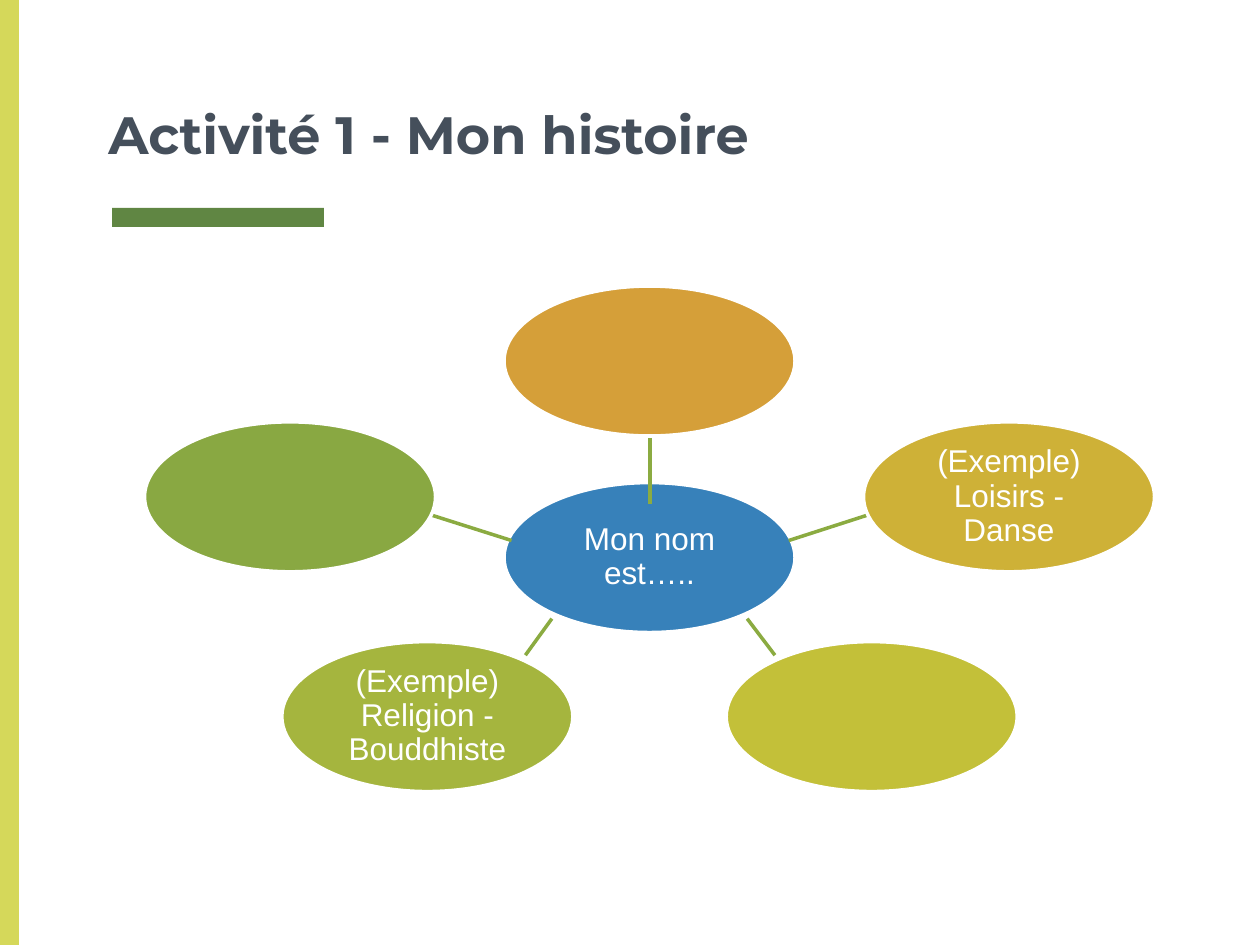
from dataclasses import dataclass
from math import cos, radians, sin

from lxml import etree
from pptx import Presentation
from pptx.dml.color import RGBColor
from pptx.enum.shapes import MSO_CONNECTOR, MSO_SHAPE
from pptx.enum.text import MSO_ANCHOR, MSO_AUTO_SIZE, PP_ALIGN
from pptx.oxml.ns import qn
from pptx.util import Inches, Pt

RECT, OVAL = MSO_SHAPE.RECTANGLE, MSO_SHAPE.OVAL
LINE = MSO_CONNECTOR.STRAIGHT
MIDDLE, BOTTOM = MSO_ANCHOR.MIDDLE, MSO_ANCHOR.BOTTOM
LEFT, CENTER = PP_ALIGN.LEFT, PP_ALIGN.CENTER
NO_FIT = MSO_AUTO_SIZE.NONE

COLORS = {
    "edge": "D5D85A", "rule": "608643", "title": "454F5B", "white": "FFFFFF",
    "spoke": "8BAB41", "hub": "3781BA", "orange": "D59F39", "gold": "CEB137",
    "lime": "C3C039", "olive": "A5B53E", "green": "89A842",
}

# Hub centre, oval size and the radii of the ring of petals
MID_X, MID_Y = 5.155, 4.425
OVAL_W, OVAL_H = 2.31, 1.19
RING_X, RING_Y = 3.0, 1.56


@dataclass
class Petal:
    color: str
    text: str
    spoke: tuple[float, float, float, float]  # from hub to petal


PETALS = [  # clockwise from the top
    Petal("orange", "", (5.16, 4, 5.16, 3.48)),
    Petal("gold", "(Exemple) Loisirs - Danse", (6.26, 4.29, 6.88, 4.09)),
    Petal("lime", "", (5.93, 4.91, 6.15, 5.2)),
    Petal("olive", "(Exemple) Religion - Bouddhiste", (4.38, 4.91, 4.17, 5.2)),
    Petal("green", "", (4.06, 4.29, 3.43, 4.09)),
]


def color(name: str) -> RGBColor:
    return RGBColor.from_string(COLORS[name])


def add_text(frame, text: str, font: str, size: int, ink: str, align,
             bold: bool = False) -> None:
    par = frame.paragraphs[0]
    par.alignment = align
    run = par.add_run()
    run.text = text
    run.font.name, run.font.size, run.font.bold = font, Pt(size), bold
    run.font.color.rgb = color(ink)


def set_frame(frame, inset: float, anchor) -> None:
    frame.word_wrap = True
    frame.auto_size = NO_FIT
    frame.vertical_anchor = anchor
    frame.margin_left = frame.margin_right = Inches(inset)
    frame.margin_top = frame.margin_bottom = Inches(inset)


def add_block(slide, kind, x: float, y: float, w: float, h: float, fill: str):
    shape = slide.shapes.add_shape(kind, Inches(x), Inches(y), Inches(w), Inches(h))
    shape.shadow.inherit = False
    shape.fill.solid()
    shape.fill.fore_color.rgb = color(fill)
    shape.line.fill.background()
    return shape


def add_oval(slide, x: float, y: float, fill: str, text: str) -> None:
    oval = add_block(slide, OVAL, x - OVAL_W / 2, y - OVAL_H / 2,
                     OVAL_W, OVAL_H, fill)
    oval.line.color.rgb = color("white")
    oval.line.width = Pt(2)
    if text:
        set_frame(oval.text_frame, 0.01, MIDDLE)
        add_text(oval.text_frame, text, "Arial", 18, "white", CENTER)
        oval.text_frame.paragraphs[0].line_spacing = 0.9


def add_spoke(slide, ends: tuple[float, float, float, float]) -> None:
    spoke = slide.shapes.add_connector(LINE, *(Inches(end) for end in ends))
    spoke.line.color.rgb = color("spoke")
    spoke.line.width = Pt(2)
    etree.SubElement(spoke._element.spPr, qn("a:effectLst"))


def main() -> None:
    deck = Presentation()
    deck.slide_width, deck.slide_height = Inches(10), Inches(7.5)
    slide = deck.slides.add_slide(deck.slide_layouts[5])

    # Side band and rule under the title
    add_block(slide, RECT, 0.89, 1.65, 1.68, 0.15, "rule")
    add_block(slide, RECT, 0, 0, 0.15, 7.5, "edge")

    # Title
    title = slide.shapes.title
    title.left, title.top = Inches(0.76), Inches(0)
    title.width, title.height = Inches(8.49), Inches(1.41)
    set_frame(title.text_frame, 0.1, BOTTOM)
    add_text(title.text_frame, "Activité 1 - Mon histoire", "Montserrat", 30,
             "title", LEFT, bold=True)

    # Hub, then each spoke with its petal
    add_oval(slide, MID_X, MID_Y, "hub", "Mon nom est…..")
    for i, petal in enumerate(PETALS):
        angle = radians(360 / len(PETALS) * i - 90)
        add_spoke(slide, petal.spoke)
        add_oval(slide, MID_X + RING_X * cos(angle), MID_Y + RING_Y * sin(angle),
                 petal.color, petal.text)

    deck.save("out.pptx")


if __name__ == "__main__":
    main()
